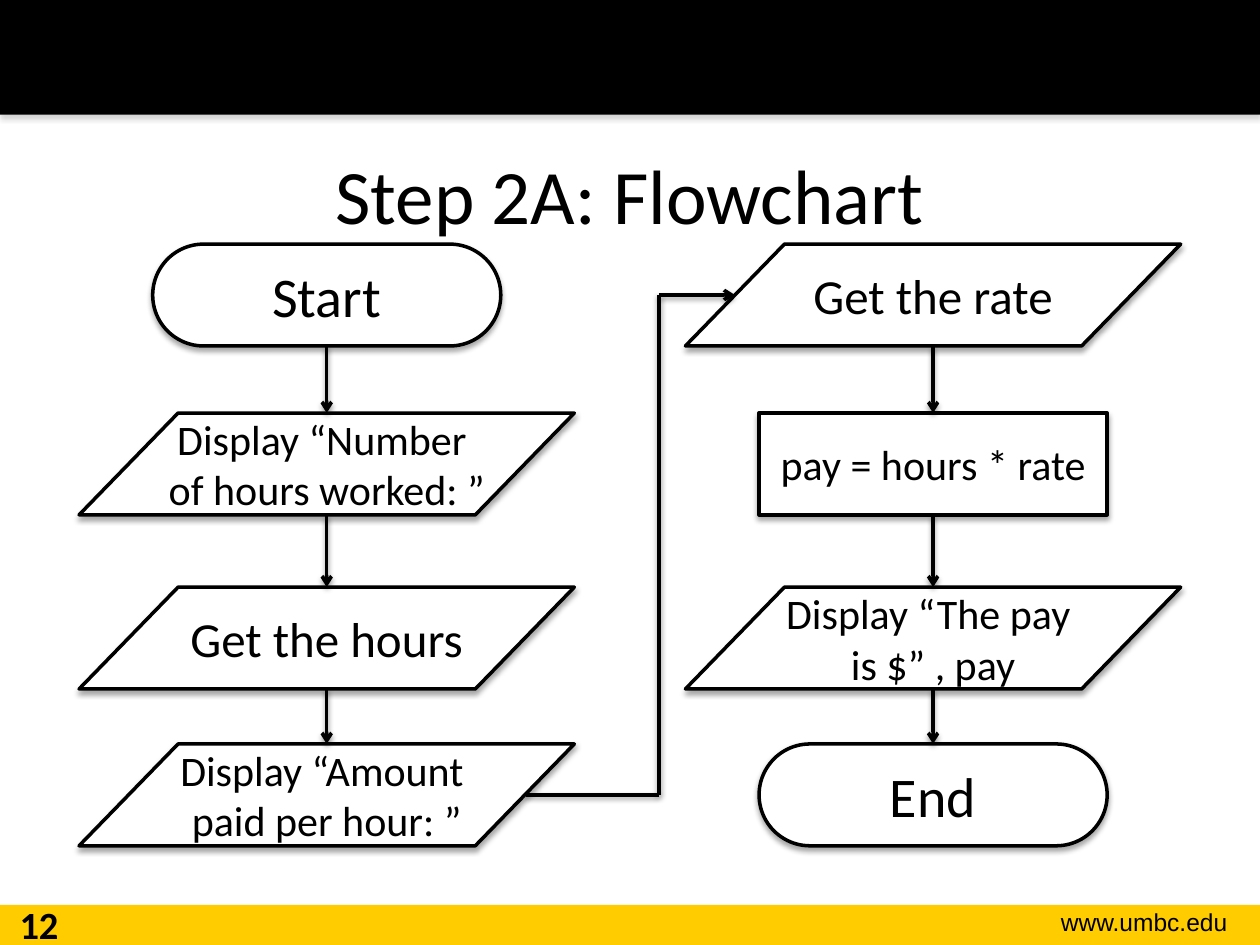
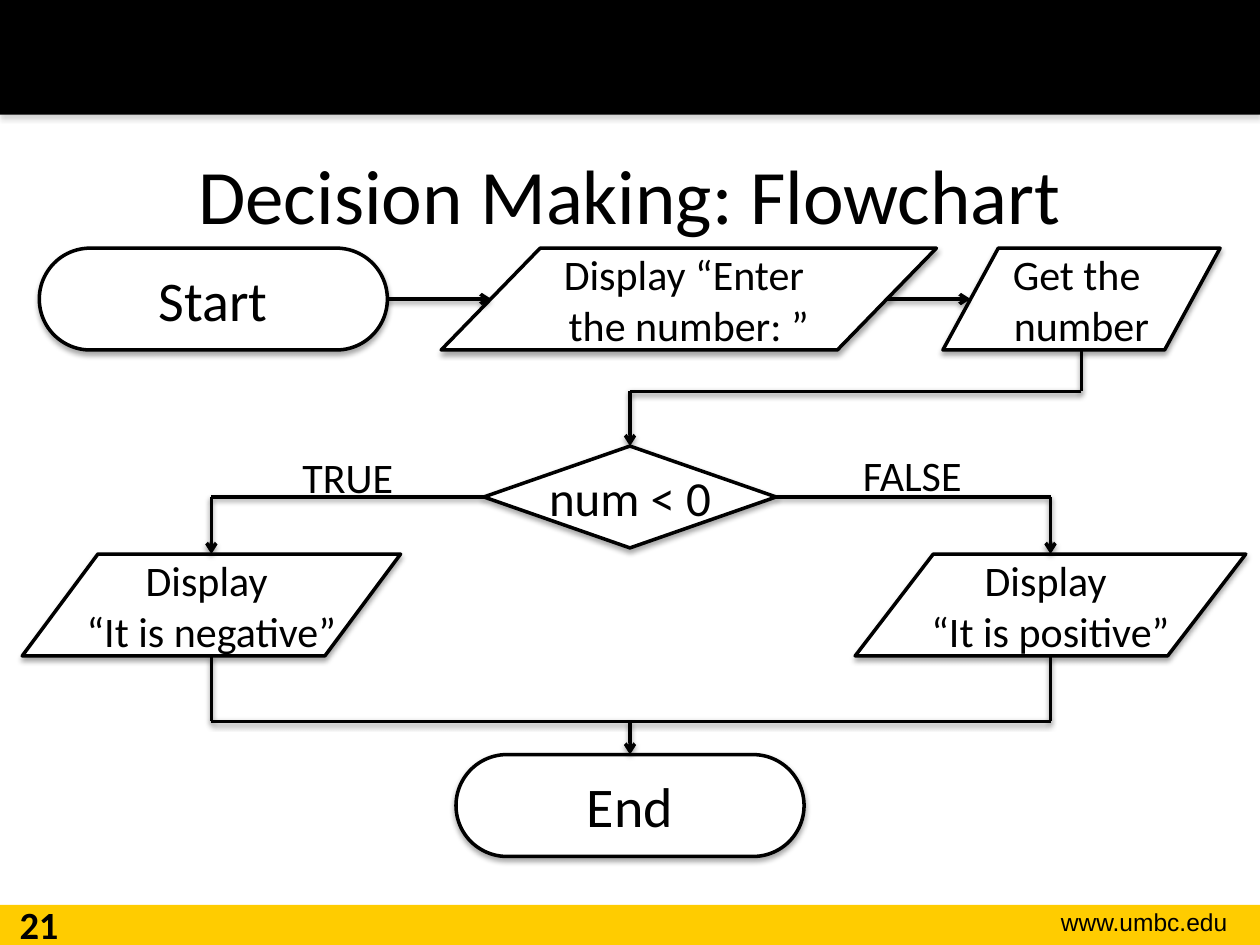
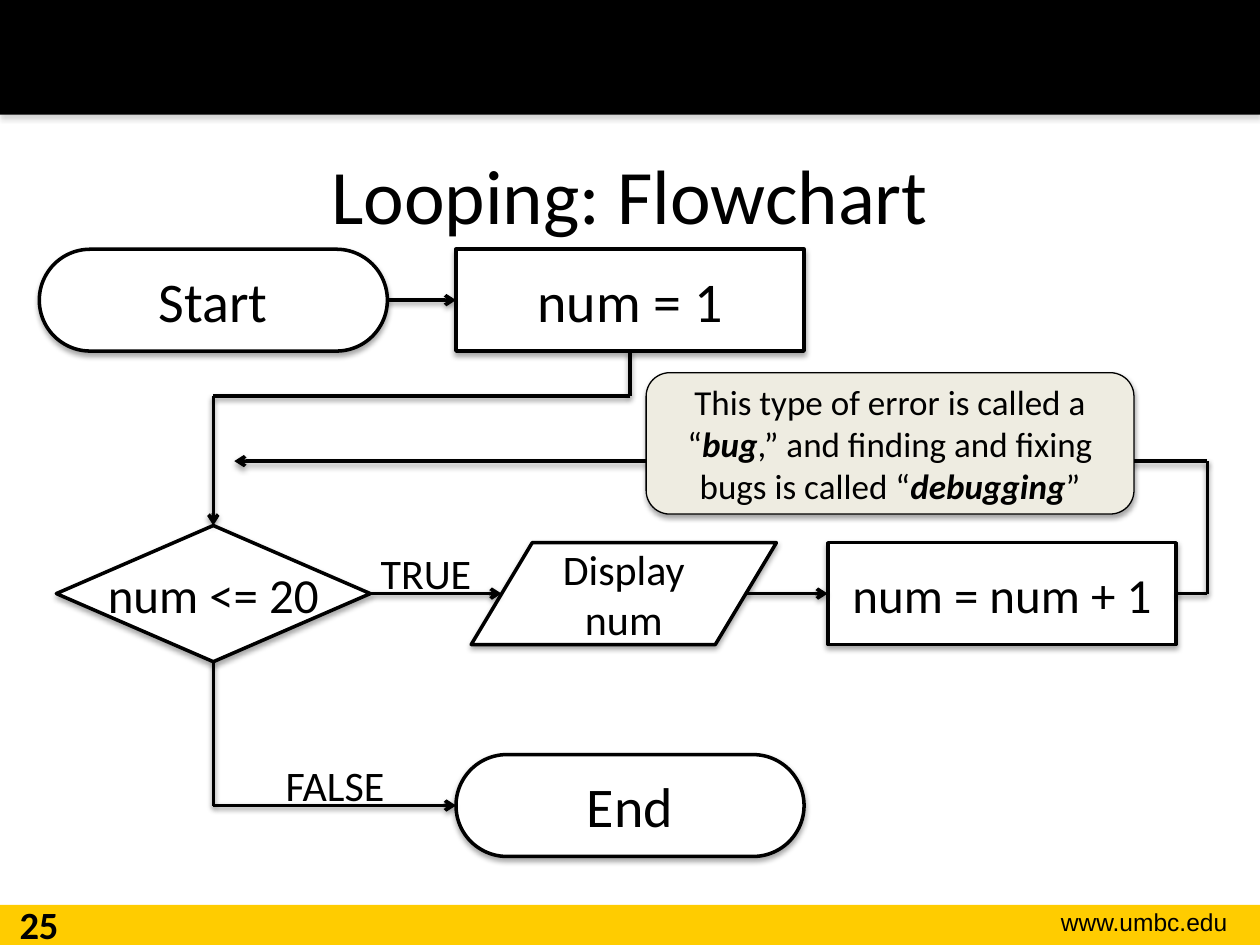
"""Build three flowchart slides on sequence, decision and looping."""
from itertools import pairwise

from lxml import etree
from pptx import Presentation
from pptx.dml.color import RGBColor
from pptx.enum.shapes import MSO_CONNECTOR, MSO_SHAPE
from pptx.enum.text import MSO_ANCHOR, PP_ALIGN
from pptx.oxml.ns import qn
from pptx.util import Pt

RECTANGLE = MSO_SHAPE.RECTANGLE
ROUNDED = MSO_SHAPE.ROUNDED_RECTANGLE
DATA = MSO_SHAPE.FLOWCHART_DATA
DECISION = MSO_SHAPE.FLOWCHART_DECISION
STRAIGHT = MSO_CONNECTOR.STRAIGHT
TOP, MIDDLE = MSO_ANCHOR.TOP, MSO_ANCHOR.MIDDLE
CENTER, RIGHT = PP_ALIGN.CENTER, PP_ALIGN.RIGHT

BLACK, WHITE, GOLD, CREAM, GRAY = "000000", "FFFFFF", "FFCC00", "EEECE1", "808080"
color = RGBColor.from_string

BOX_WIDTH, DATA_WIDTH, BOX_HEIGHT = 198.9, 283, 58.2
HALF = BOX_HEIGHT / 2


def write_text(shape, text, size=24, font="Calibri", bold=False, align=CENTER,
               anchor=TOP, wrap=True, margin=7.2):
    """Fill a shape with one paragraph; parts between bars are bold italic."""
    frame = shape.text_frame
    frame.word_wrap = wrap
    frame.vertical_anchor = anchor
    frame.margin_left = frame.margin_right = Pt(margin)
    paragraph = frame.paragraphs[0]
    paragraph.alignment = align
    for number, line in enumerate(text.split("\n")):
        if number:
            paragraph.add_line_break()
        for position, part in enumerate(line.split("|")):
            emphasized = position % 2 == 1
            run = paragraph.add_run()
            run.text = part
            run.font.name = font
            run.font.size = Pt(size)
            run.font.bold = bold or emphasized
            run.font.italic = emphasized
            run.font.color.rgb = color(BLACK)


def add_shadow(shape, shade=BLACK, opacity=35, distance=1.8):
    """Append a soft shadow that falls straight down."""
    effects = etree.SubElement(shape._element.spPr, qn("a:effectLst"))
    shadow = etree.SubElement(effects, qn("a:outerShdw"), blurRad=str(Pt(3.1)),
                              dist=str(Pt(distance)), dir="5400000", rotWithShape="0")
    tone = etree.SubElement(shadow, qn("a:srgbClr"), val=shade)
    etree.SubElement(tone, qn("a:alpha"), val=str(opacity * 1000))


left, right = 186.7, 533.2
rows = [168.6, 265.1, 364.6, 454.2]
sequence_boxes = [
    (ROUNDED, "Start", 32, left, rows[0], BOX_WIDTH, BOX_HEIGHT),
    (DATA, "Display “Number \nof hours worked: ”", 24, left, rows[1], DATA_WIDTH, BOX_HEIGHT),
    (DATA, "Get the hours", 28, left, rows[2], DATA_WIDTH, BOX_HEIGHT),
    (DATA, "Display “Amount \npaid per hour: ”", 24, left, rows[3], DATA_WIDTH, BOX_HEIGHT),
    (DATA, "Get the rate", 28, right, rows[0], DATA_WIDTH, BOX_HEIGHT),
    (RECTANGLE, "pay = hours * rate", 24, right, rows[1], BOX_WIDTH, BOX_HEIGHT),
    (DATA, "Display “The pay \nis $” , pay", 24, right, rows[2], DATA_WIDTH, BOX_HEIGHT),
    (ROUNDED, "End", 32, right, rows[3], BOX_WIDTH, BOX_HEIGHT),
]
sequence_arrows = [(376.6, rows[0], 420, rows[0])]
for column in (left, right):
    for upper, lower in pairwise(rows):
        sequence_arrows.append((column, upper + HALF, column, lower - HALF))
sequence_lines = [
    (300.5, rows[3], 376.6, rows[3]),
    (376.6, rows[0], 376.6, rows[3]),
]

start, center, positive = 121.9, 360, 600.3
negative = 120.8
top_row, test_row, result_row, end_row = 170.9, 284, 345.7, 460.3
turn, merge = 223.6, 412.2
decision_boxes = [
    (ROUNDED, "Start", 32, start, top_row, BOX_WIDTH, BOX_HEIGHT),
    (DATA, "Display “Enter \nthe number: ”", 24, 393.6, top_row, DATA_WIDTH, BOX_HEIGHT),
    (DATA, "Get the \nnumber", 24, 618, top_row, 158.4, BOX_HEIGHT),
    (DECISION, "num < 0", 28, center, test_row, 167, BOX_HEIGHT),
    (DATA, "Display \n“It is negative”", 24, negative, result_row, 216.2, BOX_HEIGHT),
    (DATA, "Display \n“It is positive”", 24, positive, result_row, 223.2, BOX_HEIGHT),
    (ROUNDED, "End", 32, center, end_row, BOX_WIDTH, BOX_HEIGHT),
]
decision_arrows = [
    (221.5, top_row, 280.8, top_row),
    (506.9, top_row, 554.6, top_row),
    (center, turn, center, test_row - HALF),
    (negative, test_row, negative, result_row - HALF),
    (positive, test_row, positive, result_row - HALF),
    (center, merge, center, end_row - HALF),
]
decision_lines = [
    (618, top_row + HALF, 618, turn),
    (618, turn, center, turn),
    (276.5, test_row, negative, test_row),
    (positive, test_row, 443.5, test_row),
    (negative, result_row + HALF, negative, merge),
    (positive, result_row + HALF, positive, merge),
    (positive, merge, negative, merge),
]

first_row, loop_row, test_height = 171.5, 339.2, 77.8
entry, back, edge = 226.2, 263.5, 689.9
loop_boxes = [
    (DECISION, "num <= 20", 28, start, loop_row, 179.4, test_height),
    (ROUNDED, "Start", 32, start, first_row, BOX_WIDTH, BOX_HEIGHT),
    (RECTANGLE, "num = 1", 32, center, first_row, BOX_WIDTH, BOX_HEIGHT),
    (DATA, "Display num", 24, 356.5, loop_row, 174.4, BOX_HEIGHT),
    (RECTANGLE, "num = num + 1", 28, 572.5, loop_row, BOX_WIDTH, BOX_HEIGHT),
    (ROUNDED, "End", 32, center, end_row, BOX_WIDTH, BOX_HEIGHT),
]
loop_arrows = [
    (221.5, first_row, 260.6, first_row),
    (start, entry, start, loop_row - test_height / 2),
    (edge, back, 133.9, back),
    (211.7, loop_row, 286.6, loop_row),
    (426.2, loop_row, 473, loop_row),
    (start, end_row, 260.6, end_row),
]
loop_lines = [
    (center, entry, start, entry),
    (center, entry, center, first_row + HALF),
    (edge, loop_row, 672, loop_row),
    (edge, back, edge, loop_row),
    (start, loop_row + test_height / 2, start, end_row),
]

slides = [
    ("Step 2A: Flowchart", "12", sequence_boxes, sequence_arrows, sequence_lines, []),
    ("Decision Making: Flowchart", "21", decision_boxes, decision_arrows, decision_lines,
     [("TRUE", 141.1, 254.2), ("FALSE", 463.7, 253.6)]),
    ("Looping: Flowchart", "25", loop_boxes, loop_arrows, loop_lines,
     [("TRUE", 185.8, 309.6), ("FALSE", 133.9, 430.6)]),
]

presentation = Presentation()
presentation.slide_width = Pt(720)
presentation.slide_height = Pt(540)

for title, page, boxes, arrows, lines, labels in slides:
    slide = presentation.slides.add_slide(presentation.slide_layouts[6])
    shapes = slide.shapes

    footer = shapes.add_shape(RECTANGLE, Pt(0), Pt(517), Pt(720), Pt(23))
    header = shapes.add_shape(RECTANGLE, Pt(0), Pt(0), Pt(720), Pt(65.5))
    for band, fill in ((footer, GOLD), (header, BLACK)):
        band.fill.solid()
        band.fill.fore_color.rgb = color(fill)
        band.line.fill.background()
    footer.shadow.inherit = False
    add_shadow(header, shade=GRAY)

    address = shapes.add_textbox(Pt(565.2), Pt(514.8), Pt(143.3), Pt(24.5))
    write_text(address, "www.umbc.edu", size=14, font="Arial", align=RIGHT)
    heading = shapes.add_textbox(Pt(36), Pt(65.5), Pt(648), Pt(90))
    write_text(heading, title, size=44, anchor=MIDDLE)
    page_number = shapes.add_textbox(Pt(0), Pt(511.2), Pt(44.6), Pt(28.8))
    write_text(page_number, page, size=22, bold=True)

    for kind, text, size, x, y, width, height in boxes:
        box = shapes.add_shape(kind, Pt(x - width / 2), Pt(y - height / 2),
                               Pt(width), Pt(height))
        if kind == ROUNDED:
            box.adjustments[0] = 0.5
        box.fill.solid()
        box.fill.fore_color.rgb = color(WHITE)
        box.line.color.rgb = color(BLACK)
        box.line.width = Pt(2)
        add_shadow(box)
        write_text(box, text, size=size, anchor=MIDDLE, margin=0,
                   wrap=kind != DECISION and "\n" not in text)

    for number, ends in enumerate(arrows + lines):
        connector = shapes.add_connector(STRAIGHT, *[Pt(value) for value in ends])
        connector.line.color.rgb = color(BLACK)
        connector.line.width = Pt(2)
        if number < len(arrows):
            etree.SubElement(connector.line._get_or_add_ln(), qn("a:tailEnd"), type="arrow")
        add_shadow(connector, opacity=38, distance=1.6)

    for text, x, y in labels:
        label = shapes.add_textbox(Pt(x), Pt(y), Pt(115.2), Pt(36))
        write_text(label, text)

note = slide.shapes.add_shape(ROUNDED, Pt(369.2), Pt(213), Pt(278.8), Pt(80.8))
note.fill.solid()
note.fill.fore_color.rgb = color(CREAM)
note.line.color.rgb = color(BLACK)
note.line.width = Pt(0.75)
add_shadow(note)
write_text(note, "This type of error is called a “|bug|,” and finding and fixing "
           "bugs is called “|debugging|”", size=20, anchor=MIDDLE)

presentation.save("out.pptx")
